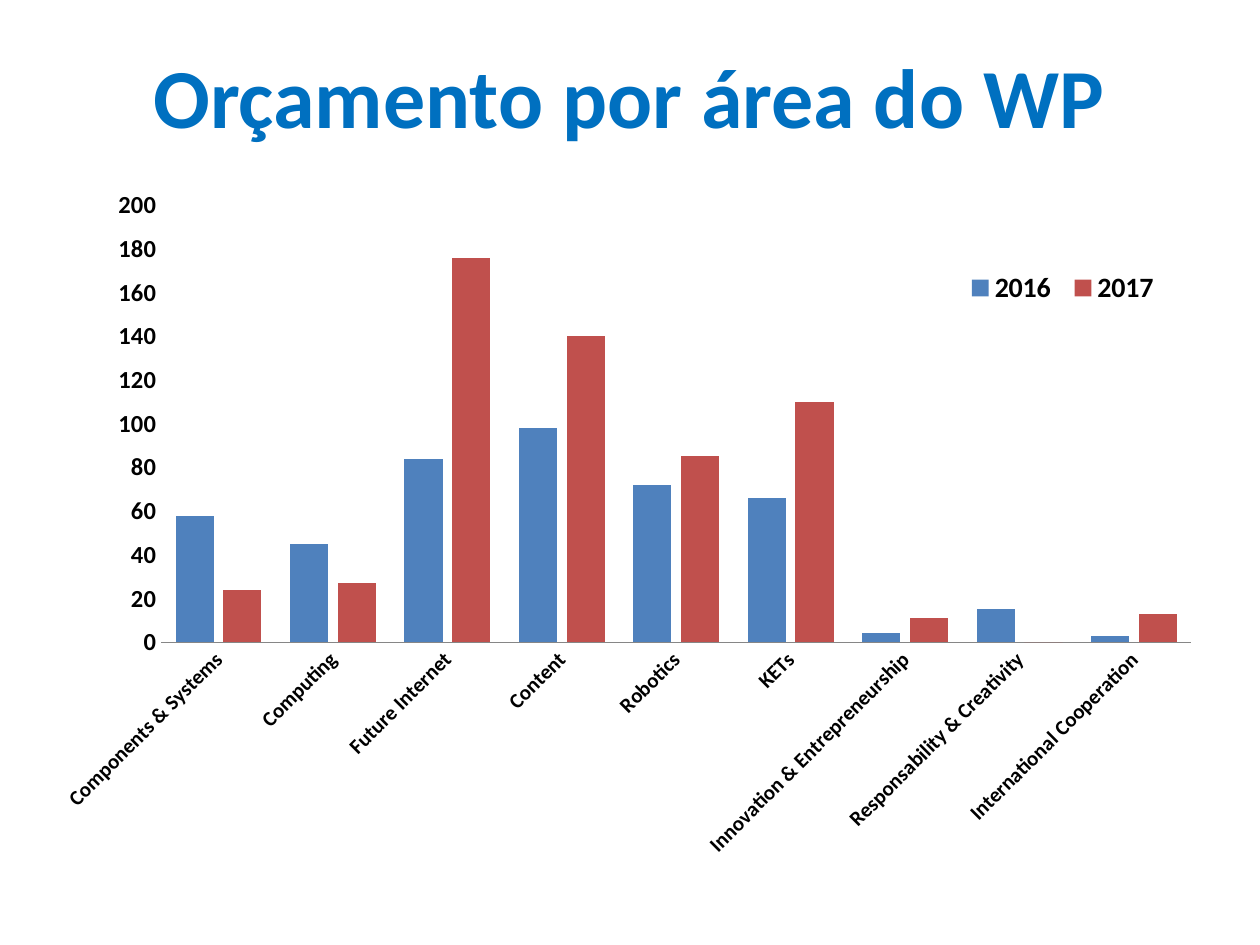
from lxml import etree
from pptx import Presentation
from pptx.chart.data import CategoryChartData as ChartData
from pptx.dml.color import RGBColor
from pptx.enum.chart import XL_CHART_TYPE as ChartType
from pptx.enum.chart import XL_LEGEND_POSITION as LegendPosition
from pptx.enum.chart import XL_TICK_MARK as TickMark
from pptx.enum.text import MSO_ANCHOR as Anchor
from pptx.enum.text import PP_ALIGN as Align
from pptx.oxml.ns import qn
from pptx.util import Cm, Pt

# Content
TITLE = "Orçamento por área do WP"
BUDGETS = [  # area, 2016, 2017
    ("Components & Systems", 58, 24),
    ("Computing", 45, 27),
    ("Future Internet", 84, 176),
    ("Content", 98, 140),
    ("Robotics", 72, 85),
    ("KETs", 66, 110),
    ("Innovation & Entrepreneurship", 4, 11),
    ("Responsability & Creativity", 15, 0),
    ("International Cooperation", 3, 13),
]
YEARS = [("2016", "4F81BD"), ("2017", "C0504D")]

# Formats: chart boxes are fractions of the chart area
TITLE_BOX = (Cm(1.27), Cm(0.33), Cm(22.83), Cm(3.18))
CHART_BOX = (Cm(0.89), Cm(3.53), Cm(23.6), Cm(15.19))
PLOT_LAYOUT = {"x": 0.1, "y": 0.04, "w": 0.88, "h": 0.58}
LEGEND_LAYOUT = {"x": 0.78, "y": 0.11, "w": 0.18, "h": 0.08}
BASE = {"name": "Calibri", "bold": True}
TITLE_FONT = {**BASE, "size": Pt(48)}
CHART_FONT = {**BASE, "size": Pt(10), "bold": False}
AREA_FONT = {**BASE, "size": Pt(12)}
VALUE_FONT = {**BASE, "size": Pt(14)}
LEGEND_FONT = {**BASE, "size": Pt(16)}


def color(hex_value):
    return RGBColor.from_string(hex_value)


def set_font(font, formats, hex_value="000000"):
    for name, value in formats.items():
        setattr(font, name, value)
    font.color.rgb = color(hex_value)


def set_layout(parent, position, layout, inner=False):
    """Place a chart part by hand, as the child at the given position."""
    for old in parent.findall(qn("c:layout")):
        parent.remove(old)
    outer = etree.Element(qn("c:layout"))
    manual = etree.SubElement(outer, qn("c:manualLayout"))
    settings = {"layoutTarget": "inner"} if inner else {}
    settings.update(xMode="edge", yMode="edge", **layout)
    for tag, value in settings.items():
        etree.SubElement(manual, qn(f"c:{tag}")).set("val", str(value))
    parent.insert(position, outer)


presentation = Presentation()
presentation.slide_width, presentation.slide_height = Cm(25.4), Cm(19.05)
slide = presentation.slides.add_slide(presentation.slide_layouts[6])

# Chart
data = ChartData()
data.categories = [row[0] for row in BUDGETS]
for column, (year, _) in enumerate(YEARS, start=1):
    data.add_series(year, [row[column] for row in BUDGETS])
chart = slide.shapes.add_chart(ChartType.COLUMN_CLUSTERED, *CHART_BOX, data).chart
chart.has_title = False
set_font(chart.font, CHART_FONT)

plot = chart.plots[0]
plot.vary_by_categories = False
plot.gap_width, plot.overlap = 75, -25
for series, (_, fill) in zip(plot.series, YEARS):
    series.format.fill.solid()
    series.format.fill.fore_color.rgb = color(fill)
set_layout(chart.plots[0]._element.getparent(), 0, PLOT_LAYOUT, inner=True)

# Axes
areas, values = chart.category_axis, chart.value_axis
for axis, formats in ((areas, AREA_FONT), (values, VALUE_FONT)):
    axis.has_major_gridlines = False
    axis.major_tick_mark = axis.minor_tick_mark = TickMark.NONE
    set_font(axis.tick_labels.font, formats)
areas.format.line.color.rgb = color("868686")
areas._element.find(qn("c:txPr")).find(qn("a:bodyPr")).set("rot", str(-45 * 60000))
values.format.line.fill.background()
values.minimum_scale, values.maximum_scale, values.major_unit = 0, 200, 20

# Legend
chart.has_legend = True
legend = chart.legend
legend.position = LegendPosition.BOTTOM
legend.include_in_layout = False
set_font(legend.font, LEGEND_FONT)
set_layout(legend._element, 1, LEGEND_LAYOUT)

# Title
frame = slide.shapes.add_textbox(*TITLE_BOX).text_frame
frame.word_wrap = True
frame.vertical_anchor = Anchor.MIDDLE
paragraph = frame.paragraphs[0]
paragraph.alignment = Align.CENTER
run = paragraph.add_run()
run.text = TITLE
set_font(run.font, TITLE_FONT, "0070C0")

presentation.save("out.pptx")
